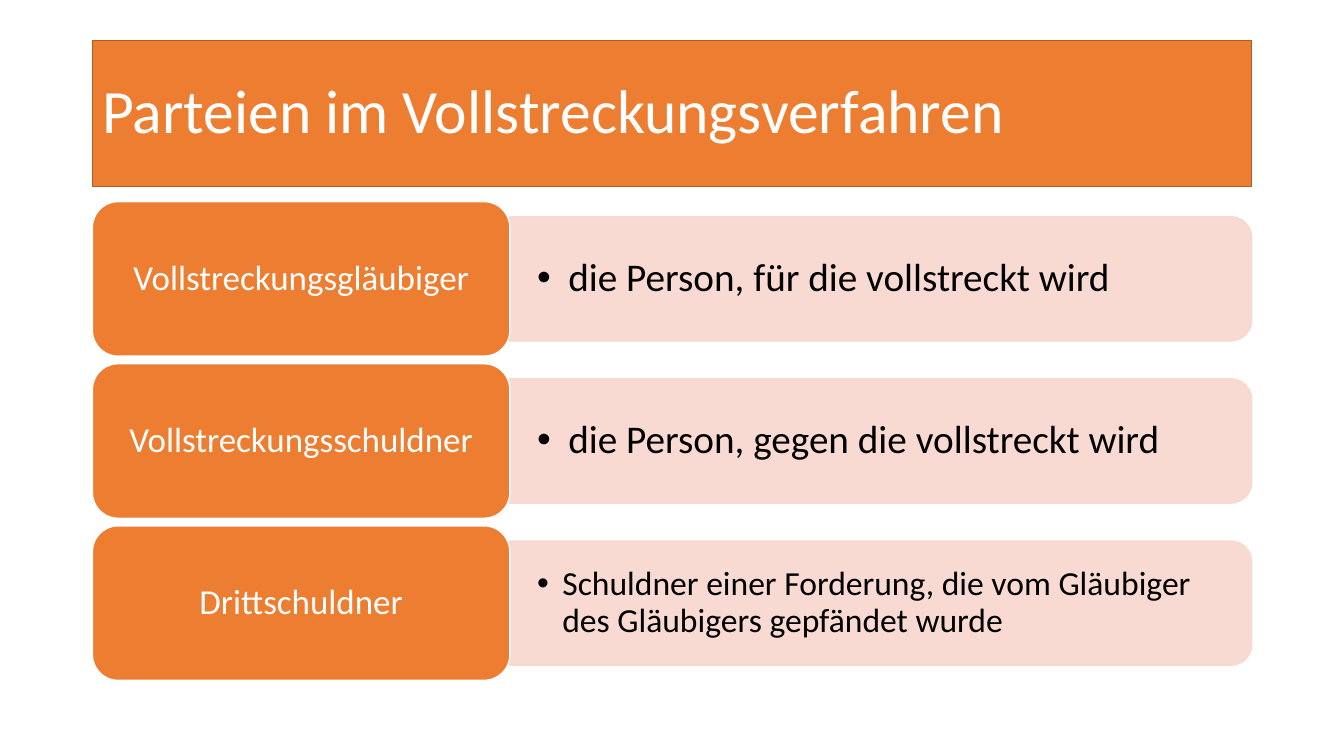
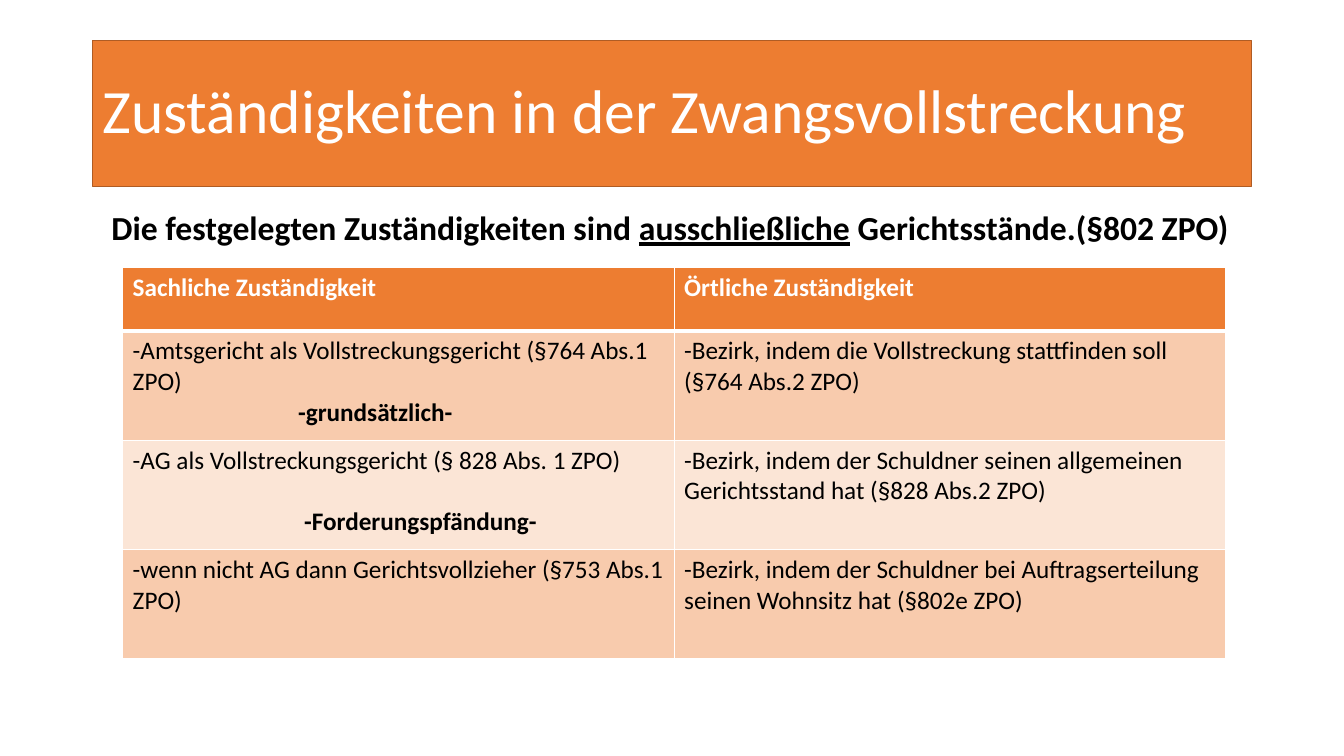
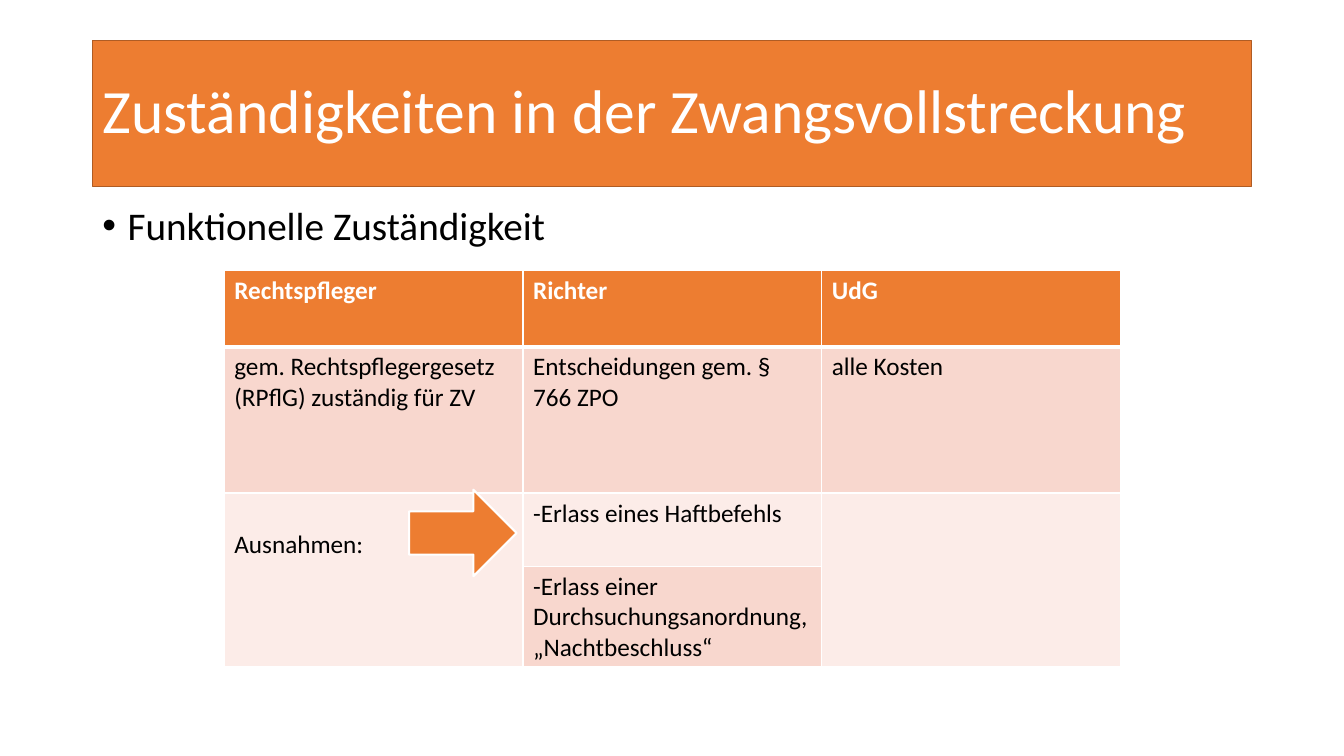
"""Build three slides on parties and jurisdiction in enforcement proceedings."""
from dataclasses import dataclass
from typing import Any, NamedTuple

from lxml.etree import SubElement
from pptx import Presentation
from pptx.dml.color import RGBColor
from pptx.enum.shapes import MSO_SHAPE as Preset
from pptx.enum.text import MSO_ANCHOR as Anchor, PP_ALIGN as Align
from pptx.oxml import parse_xml
from pptx.oxml.ns import nsdecls, qn
from pptx.util import Emu, Inches, Pt

COLORS = {
    "accent": "ED7D31", "title_edge": "AF5C24", "white": "FFFFFF", "black": "000000",
    "rose": "F8D7CE", "rose_light": "FCECE8", "peach": "F8CBAD", "peach_light": "FBE5D6",
}
FONT = "Calibri"
SLIDE_WIDTH, SLIDE_HEIGHT = Inches(13.33), Inches(7.5)
COLUMN, ROW = SLIDE_WIDTH / 160, SLIDE_HEIGHT / 90
LEFT, CONTENT_WIDTH = 11, 138
CELL_INSET = {"margin_left": Inches(0.1), "margin_right": Inches(0.1),
              "margin_top": Inches(0.05), "margin_bottom": Inches(0.05)}
BAR_INSET = {"margin_left": Inches(0.27), "margin_right": Inches(0.27)}


class Box(NamedTuple):
    left: float
    top: float
    width: float
    height: float

    def lengths(self) -> tuple[Emu, ...]:
        units = (COLUMN, ROW, COLUMN, ROW)
        return tuple(Emu(round(value * unit)) for value, unit in zip(self, units))


class Run(NamedTuple):
    text: str
    underline: bool = False


@dataclass(frozen=True)
class Line:
    runs: tuple[Run, ...]
    size: float = 18
    color: str = "black"
    bold: bool = False
    align: Any = Align.LEFT
    spacing: float = 1.0
    before: float = 0
    indent: float = 0
    bullet: bool = False


@dataclass(frozen=True)
class Cell:
    lines: tuple[Line, ...] = ()
    fill: str = "rose"
    drop: float = 0
    rows: int = 1


@dataclass(frozen=True)
class Party:
    name: str
    role: str
    size: float
    indent: float


PARTIES = (
    Party("Vollstreckungsgläubiger", "die Person, für die vollstreckt wird", 28, 0.31),
    Party("Vollstreckungsschuldner", "die Person, gegen die vollstreckt wird", 28, 0.31),
    Party("Drittschuldner",
          "Schuldner einer Forderung, die vom Gläubiger des Gläubigers gepfändet wurde",
          24, 0.25),
)


def line(text: str, **values: Any) -> Line:
    return Line((Run(text),), **values)


def header(text: str) -> Cell:
    return Cell((line(text, color="white", bold=True),), "accent")


def cell(fill: str, *texts: str, note: Line | None = None, **values: Any) -> Cell:
    lines = tuple(line(text) for text in texts)
    return Cell(lines + ((note,) if note else ()), fill, **values)


JURISDICTION = (
    (header("Sachliche Zuständigkeit"), header("Örtliche Zuständigkeit")),
    (cell("peach", "-Amtsgericht als Vollstreckungsgericht (§764 Abs.1 ZPO)",
          note=line("-grundsätzlich-", bold=True, indent=1.64)),
     cell("peach", "-Bezirk, indem die Vollstreckung stattfinden soll (§764 Abs.2 ZPO)")),
    (cell("peach_light", "-AG als Vollstreckungsgericht (§ 828 Abs. 1 ZPO)",
          note=line("-Forderungspfändung-", bold=True, indent=1.7, before=22)),
     cell("peach_light", "-Bezirk, indem der Schuldner seinen allgemeinen "
          "Gerichtsstand hat (§828 Abs.2 ZPO)")),
    (cell("peach", "-wenn nicht AG dann Gerichtsvollzieher (§753 Abs.1 ZPO)"),
     cell("peach", "-Bezirk, indem der Schuldner bei Auftragserteilung "
          "seinen Wohnsitz hat (§802e ZPO)")),
)
FUNCTIONS = (
    (header("Rechtspfleger"), header("Richter"), header("UdG")),
    (cell("rose", "gem. Rechtspflegergesetz (RPflG) zuständig für ZV"),
     cell("rose", "Entscheidungen gem. § 766 ZPO"), cell("rose", "alle Kosten")),
    (cell("rose_light", "Ausnahmen:", drop=0.31, rows=2),
     cell("rose_light", "-Erlass eines Haftbefehls"), cell("rose_light", rows=2)),
    (cell("rose_light"),
     cell("rose", "-Erlass einer Durchsuchungsanordnung,", "„Nachtbeschluss“"),
     cell("rose_light")),
)


def color(name: str) -> RGBColor:
    return RGBColor.from_string(COLORS[name])


def apply_format(target: Any, values: dict[str, Any]) -> None:
    for name, value in values.items():
        setattr(target, name, value)


def write(frame: Any, lines: tuple[Line, ...]) -> None:
    for index, item in enumerate(lines):
        paragraph = frame.add_paragraph() if index else frame.paragraphs[0]
        apply_format(paragraph, {"alignment": item.align, "line_spacing": item.spacing,
                                 "space_before": Pt(item.before)})
        properties = paragraph._p.get_or_add_pPr()
        if item.indent:
            properties.set("marL", str(Inches(item.indent)))
        if item.bullet:
            properties.set("indent", str(-Inches(item.indent)))
            SubElement(properties, qn("a:buFont"), typeface="Arial")
            SubElement(properties, qn("a:buChar"), char="•")
        for part in item.runs:
            run = paragraph.add_run()
            run.text = part.text
            run.font.color.rgb = color(item.color)
            apply_format(run.font, {"name": FONT, "size": Pt(item.size),
                                    "bold": item.bold, "underline": part.underline})


def add_block(slide: Any, preset: Any, box: Box, fill: str, edge: str,
              *lines: Line, weight: float = 1) -> Any:
    shape = slide.shapes.add_shape(preset, *box.lengths())
    shape.shadow.inherit = False
    shape.fill.solid()
    shape.fill.fore_color.rgb = color(fill)
    shape.line.color.rgb = color(edge)
    shape.line.width = Pt(weight)
    apply_format(shape.text_frame, {**CELL_INSET, "word_wrap": True,
                                    "vertical_anchor": Anchor.MIDDLE})
    write(shape.text_frame, lines)
    return shape


def add_text(slide: Any, box: Box, *lines: Line, **values: Any) -> None:
    frame = slide.shapes.add_textbox(*box.lengths()).text_frame
    apply_format(frame, {**CELL_INSET, "word_wrap": True, **values})
    write(frame, lines)


def add_titled_slide(presentation: Any, title: str) -> Any:
    slide = presentation.slides.add_slide(presentation.slide_layouts[6])
    add_block(slide, Preset.RECTANGLE, Box(LEFT, 4.8, CONTENT_WIDTH, 17.4),
              "accent", "title_edge", line(title, size=44, color="white", spacing=0.9))
    return slide


def set_borders(table_cell: Any, top: float, bottom: float) -> None:
    properties = table_cell._tc.get_or_add_tcPr()
    widths = {"lnL": 1, "lnR": 1, "lnT": top, "lnB": bottom}
    for index, (side, width) in enumerate(widths.items()):
        properties.insert(index, parse_xml(
            f'<a:{side} {nsdecls("a")} w="{Pt(width)}"><a:solidFill>'
            f'<a:srgbClr val="{COLORS["white"]}"/></a:solidFill></a:{side}>'))


def add_grid(slide: Any, left: float, top: float, width: float,
             heights: tuple[float, ...], rows: tuple[tuple[Cell, ...], ...]) -> None:
    box = Box(left, top, width, sum(heights))
    table = slide.shapes.add_table(len(rows), len(rows[0]), *box.lengths()).table
    apply_format(table, {"first_row": False, "horz_banding": False})
    for row_index, (height, row) in enumerate(zip(heights, rows)):
        table.rows[row_index].height = Emu(round(height * ROW))
        for column_index, item in enumerate(row):
            target = table.cell(row_index, column_index)
            apply_format(target, {**CELL_INSET, "margin_top": Inches(0.05 + item.drop)})
            target.fill.solid()
            target.fill.fore_color.rgb = color(item.fill)
            set_borders(target, 3 if row_index == 1 else 1, 1 if row_index else 3)
            write(target.text_frame, item.lines)
            if item.rows > 1:
                target.merge(table.cell(row_index + item.rows - 1, column_index))


def add_party(slide: Any, party: Party, top: float) -> None:
    label = Box(LEFT, top, 49.7, 18.4)
    bar_left, bar_width, bar_height = LEFT + label.width, 88.3, 14.8
    center_x, center_y = bar_left + bar_width / 2, top + label.height / 2
    upright = Box(center_x - bar_height / 2, center_y - bar_width / 2,
                  bar_height, bar_width)
    bar = add_block(slide, Preset.ROUND_2_SAME_RECTANGLE, upright, "rose", "rose")
    bar.rotation = 90
    for tint in bar._element.spPr.iter(qn("a:srgbClr")):
        SubElement(tint, qn("a:alpha"), val="90000")
    add_text(slide, Box(bar_left, center_y - bar_height / 2, bar_width, bar_height),
             line(party.role, size=party.size, spacing=0.9, indent=party.indent,
                  bullet=True), vertical_anchor=Anchor.MIDDLE, **BAR_INSET)
    add_block(slide, Preset.ROUNDED_RECTANGLE, label, "accent", "white",
              line(party.name, size=25, color="white", align=Align.CENTER, spacing=0.9))


def main() -> None:
    presentation = Presentation()
    apply_format(presentation, {"slide_width": SLIDE_WIDTH, "slide_height": SLIDE_HEIGHT})

    slide = add_titled_slide(presentation, "Parteien im Vollstreckungsverfahren")
    for index, party in enumerate(PARTIES):
        add_party(slide, party, 24 + 19.3 * index)

    slide = add_titled_slide(presentation, "Zuständigkeiten in der Zwangsvollstreckung")
    statement = (Run("Die festgelegten Zuständigkeiten sind "),
                 Run("ausschließliche", True), Run(" Gerichtsstände.(§802 ZPO)"))
    add_text(slide, Box(LEFT, 24.6, CONTENT_WIDTH, 6),
             Line(statement, size=24, bold=True, spacing=0.9, indent=0.09))
    add_grid(slide, 14.6, 31.8, 131.3, (7.6, 13, 13, 13), JURISDICTION)

    slide = add_titled_slide(presentation, "Zuständigkeiten in der Zwangsvollstreckung")
    add_text(slide, Box(LEFT, 24, CONTENT_WIDTH, 6),
             line("Funktionelle Zuständigkeit", size=28, spacing=0.9, indent=0.25,
                  bullet=True))
    add_grid(slide, 26.7, 32.2, 106.7, (9.1, 17.4, 8.7, 12), FUNCTIONS)
    add_block(slide, Preset.RIGHT_ARROW, Box(48.7, 58.3, 12.8, 10.3),
              "accent", "white", weight=1.5)

    presentation.save("out.pptx")


if __name__ == "__main__":
    main()
